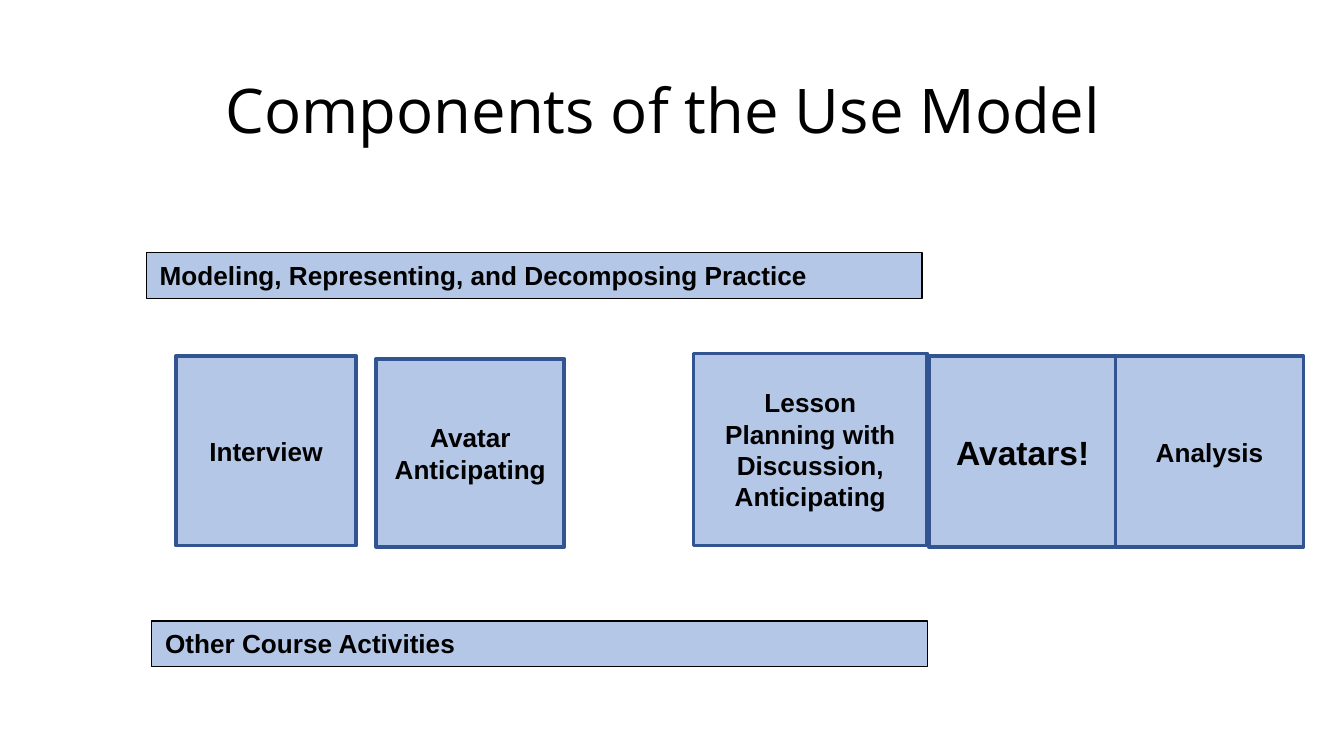
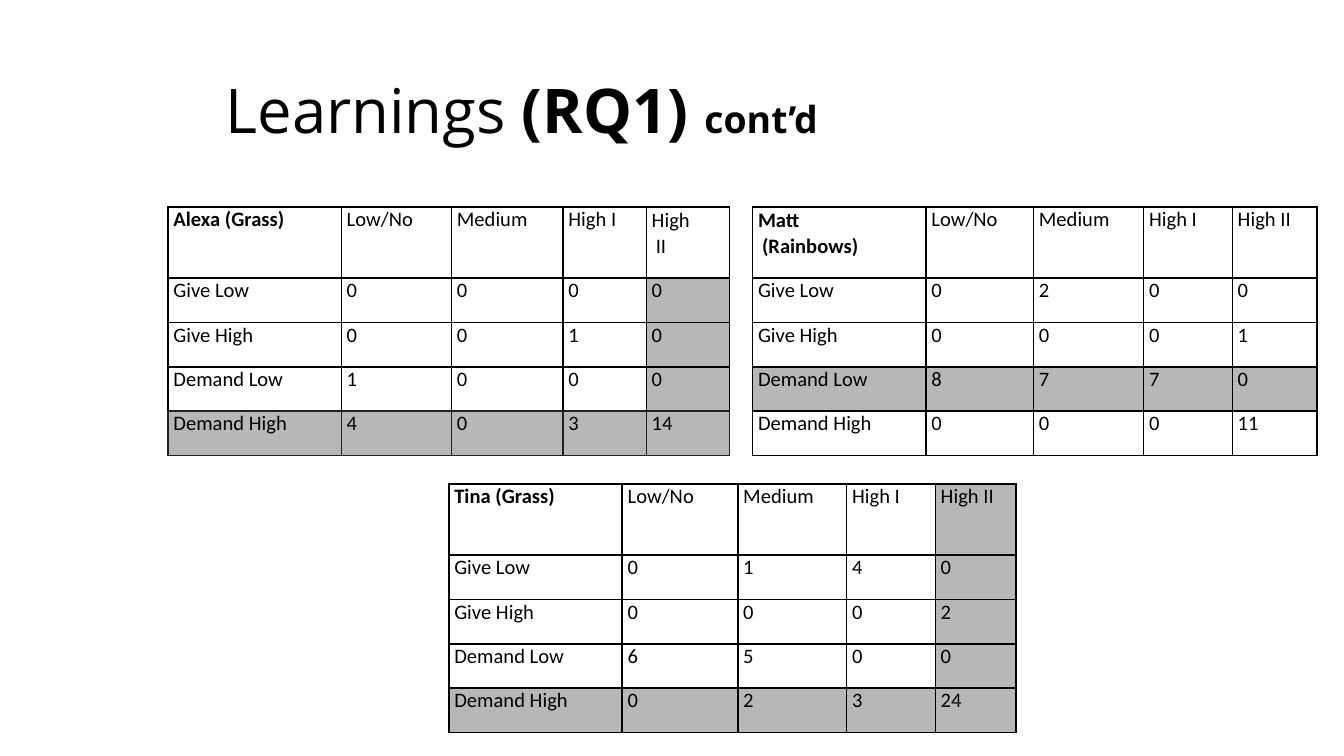
from dataclasses import dataclass
from typing import NamedTuple

from lxml.etree import SubElement
from pptx import Presentation
from pptx.dml.color import RGBColor
from pptx.enum.shapes import MSO_SHAPE
from pptx.enum.text import MSO_ANCHOR, MSO_AUTO_SIZE, PP_ALIGN
from pptx.oxml.ns import qn
from pptx.slide import Slide
from pptx.table import _Cell
from pptx.text.text import TextFrame
from pptx.util import Inches, Pt

BLACK = RGBColor(0x00, 0x00, 0x00)
CHARCOAL = RGBColor(0x21, 0x21, 0x21)
LIGHT_BLUE = RGBColor(0xB4, 0xC7, 0xE7)
DARK_BLUE = RGBColor(0x32, 0x54, 0x91)
GREY = RGBColor(0xB7, 0xB7, 0xB7)

SLIDE_WIDTH = Inches(10)
SLIDE_HEIGHT = SLIDE_WIDTH * 9 // 16

TITLE_FONT = {"name": "Open Sans", "size": Pt(33), "bold": False}
LABEL_FONT = {"name": "Arial", "size": Pt(14), "bold": True}
CELL_FONT = {"name": "Calibri", "size": Pt(11), "bold": False}

CELL_FORMAT = {"margin_left": 0, "margin_right": 0, "margin_top": 0, "margin_bottom": 0}
PLAIN_TABLE = {"first_row": False, "horz_banding": False}
BAR_FRAME = {"word_wrap": True, "auto_size": MSO_AUTO_SIZE.SHAPE_TO_FIT_TEXT,
             "vertical_anchor": MSO_ANCHOR.TOP}
STAGE_FRAME = {"word_wrap": True, "vertical_anchor": MSO_ANCHOR.MIDDLE}
TITLE_FRAME = {"word_wrap": True, "auto_size": MSO_AUTO_SIZE.NONE,
               "vertical_anchor": MSO_ANCHOR.MIDDLE}

COLUMN_HEADS = ("Low/No", "Medium", "High I", "High II")
ROW_HEADS = ("Give Low", "Give High", "Demand Low", "Demand High")
ROW_HEIGHTS = (0.53, 0.33, 0.33, 0.33, 0.33)
LAST_ROW = len(ROW_HEADS)
LAST_COLUMN = len(COLUMN_HEADS)


class Bar(NamedTuple):
    label: str
    left: float
    top: float


class Stage(NamedTuple):
    label: str
    left: float
    top: float
    width: float
    height: float
    size: int = 14


@dataclass(frozen=True)
class MoveTable:
    """Counts of moves; a shaded column starts at row shaded_from."""
    student: str
    left: float
    top: float
    widths: tuple[float, ...]
    counts: tuple[tuple[int, ...], ...]
    shaded_row: int
    shaded_from: int | None = None
    last_row_line: RGBColor = BLACK
    right_indents: tuple[float, ...] = (0, 0, 0, 0, 0)

    def rows(self) -> list[tuple[str, ...]]:
        body = [(head, *map(str, counts)) for head, counts in zip(ROW_HEADS, self.counts)]
        return [(self.student, *COLUMN_HEADS), *body]

    def is_shaded(self, row: int, column: int) -> bool:
        in_column = self.shaded_from is not None and row >= self.shaded_from
        return row == self.shaded_row or (in_column and column == LAST_COLUMN)

    def line_color(self, row: int, side: str) -> RGBColor:
        touches_last = row == LAST_ROW or (row == LAST_ROW - 1 and side == "b")
        return self.last_row_line if touches_last else BLACK


BARS = (
    Bar("Modeling, Representing, and Decomposing Practice", 1.09, 1.88),
    Bar("Other Course Activities", 1.13, 4.62),
)
STAGES = (
    Stage("Interview", 1.31, 2.65, 1.34, 1.41),
    Stage("Avatar\nAnticipating", 2.8, 2.67, 1.4, 1.4),
    Stage("Lesson Planning with Discussion, Anticipating", 5.16, 2.63, 1.74, 1.43),
    Stage("Avatars!", 6.91, 2.65, 1.4, 1.42, 18),
    Stage("Analysis", 8.3, 2.65, 1.4, 1.42),
)
MOVE_TABLES = (
    MoveTable("Alexa (Grass)", 1.25, 1.54, (1.29, 0.82, 0.83, 0.62, 0.62),
              ((0, 0, 0, 0), (0, 0, 1, 0), (1, 0, 0, 0), (4, 0, 3, 14)),
              shaded_row=4, shaded_from=1, last_row_line=CHARCOAL,
              right_indents=(0, 0, 0, 0, 0.27)),
    MoveTable("Matt (Rainbows)", 5.6, 1.54, (1.29, 0.8, 0.82, 0.66, 0.63),
              ((0, 2, 0, 0), (0, 0, 0, 1), (8, 7, 7, 0), (0, 0, 0, 11)),
              shaded_row=3, right_indents=(0.45, 0, 0, 0, 0)),
    MoveTable("Tina (Grass)", 3.34, 3.6, (1.29, 0.86, 0.81, 0.66, 0.6),
              ((0, 1, 4, 0), (0, 0, 0, 2), (6, 5, 0, 0), (0, 2, 3, 24)),
              shaded_row=4, shaded_from=0),
)


def apply(target: object, values: dict) -> None:
    for attribute, value in values.items():
        setattr(target, attribute, value)


def style_text(frame: TextFrame, font: dict, align: PP_ALIGN = PP_ALIGN.LEFT) -> None:
    for paragraph in frame.paragraphs:
        paragraph.alignment = align
        for run in paragraph.runs:
            apply(run.font, font)
            run.font.color.rgb = BLACK


def add_title(slide: Slide, *parts: tuple[str, dict]) -> None:
    """Write the title from (text, font changes) parts."""
    frame = slide.shapes.add_textbox(
        Inches(1.58), Inches(0.3), Inches(7.73), Inches(1.09)).text_frame
    apply(frame, TITLE_FRAME)
    paragraph = frame.paragraphs[0]
    paragraph.line_spacing = 0.9
    for text, changes in parts:
        run = paragraph.add_run()
        run.text = text
        apply(run.font, TITLE_FONT | changes)
        run.font.color.rgb = BLACK


def add_panel(slide: Slide, box: tuple[float, ...], label: str, line: RGBColor,
              line_width: float, frame_format: dict, font: dict, align: PP_ALIGN) -> None:
    panel = slide.shapes.add_shape(MSO_SHAPE.RECTANGLE, *map(Inches, box))
    panel.shadow.inherit = False
    panel.fill.solid()
    panel.fill.fore_color.rgb = LIGHT_BLUE
    panel.line.color.rgb = line
    panel.line.width = Pt(line_width)
    panel.text_frame.text = label
    apply(panel.text_frame, frame_format)
    style_text(panel.text_frame, font, align)


def add_bar(slide: Slide, bar: Bar) -> None:
    add_panel(slide, (bar.left, bar.top, 5.77, 0.34), bar.label, BLACK, 0.75,
              BAR_FRAME, LABEL_FONT, PP_ALIGN.LEFT)


def add_stage(slide: Slide, stage: Stage) -> None:
    add_panel(slide, (stage.left, stage.top, stage.width, stage.height), stage.label,
              DARK_BLUE, 2, STAGE_FRAME, LABEL_FONT | {"size": Pt(stage.size)},
              PP_ALIGN.CENTER)


def add_border(cell: _Cell, side: str, color: RGBColor) -> None:
    properties = cell._tc.get_or_add_tcPr()
    border = SubElement(properties, qn(f"a:ln{side.upper()}"), w=str(Pt(1)))
    fill = SubElement(border, qn("a:solidFill"))
    SubElement(fill, qn("a:srgbClr"), val=str(color))


def indent(cell: _Cell, right: float) -> None:
    """Give the cell text a hanging indent; a right indent wraps it with looser lines."""
    paragraph = cell.text_frame.paragraphs[0]
    properties = paragraph._p.get_or_add_pPr()
    for name, length in {"marL": 0.07, "marR": right, "indent": -0.03}.items():
        properties.set(name, str(Inches(length)))
    if right:
        paragraph.line_spacing = 1.03


def add_move_table(slide: Slide, moves: MoveTable) -> None:
    box = (moves.left, moves.top, sum(moves.widths), sum(ROW_HEIGHTS))
    table = slide.shapes.add_table(
        len(ROW_HEIGHTS), len(moves.widths), *map(Inches, box)).table
    apply(table, PLAIN_TABLE)
    for column, width in zip(table.columns, moves.widths):
        column.width = Inches(width)
    for row, height in zip(table.rows, ROW_HEIGHTS):
        row.height = Inches(height)
    for r, texts in enumerate(moves.rows()):
        for c, text in enumerate(texts):
            cell = table.cell(r, c)
            cell.text = text
            apply(cell, CELL_FORMAT)
            indent(cell, moves.right_indents[c] if r == 0 else 0)
            style_text(cell.text_frame, CELL_FONT | {"bold": r == c == 0})
            for side in "lrtb":
                add_border(cell, side, moves.line_color(r, side))
            if moves.is_shaded(r, c):
                cell.fill.solid()
                cell.fill.fore_color.rgb = GREY
            else:
                cell.fill.background()


def main() -> None:
    deck = Presentation()
    deck.slide_width, deck.slide_height = SLIDE_WIDTH, SLIDE_HEIGHT
    blank = deck.slide_layouts[6]

    components = deck.slides.add_slide(blank)
    add_title(components, ("Components of the Use Model", {}))
    top_bar, bottom_bar = BARS
    add_bar(components, top_bar)
    for stage in STAGES:
        add_stage(components, stage)
    add_bar(components, bottom_bar)

    learnings = deck.slides.add_slide(blank)
    add_title(learnings, ("Learnings ", {}), ("(RQ1) ", {"bold": True}),
              ("cont’d", {"bold": True, "size": Pt(20)}))
    for moves in MOVE_TABLES:
        add_move_table(learnings, moves)

    deck.save("out.pptx")


if __name__ == "__main__":
    main()
